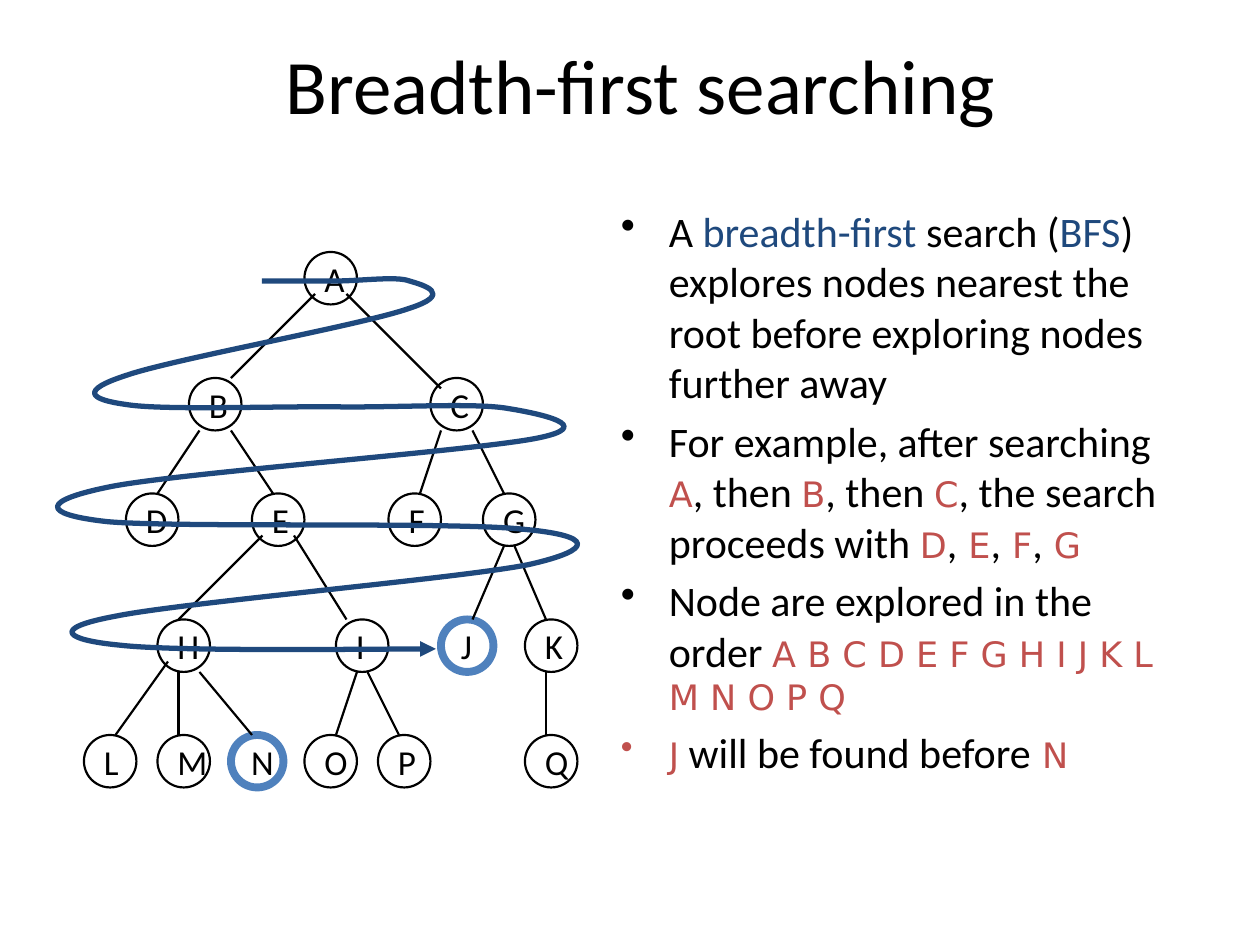
from dataclasses import dataclass

from lxml import etree
from pptx import Presentation
from pptx.dml.color import RGBColor
from pptx.enum.shapes import MSO_CONNECTOR, MSO_SHAPE
from pptx.enum.text import MSO_ANCHOR, PP_ALIGN
from pptx.oxml.ns import qn
from pptx.util import Inches, Pt

OVAL = MSO_SHAPE.OVAL
STRAIGHT = MSO_CONNECTOR.STRAIGHT
MIDDLE = MSO_ANCHOR.MIDDLE
LEFT = PP_ALIGN.LEFT
CENTER = PP_ALIGN.CENTER

BLACK = "000000"
NAVY = "1F497D"
BLUE = "4F81BD"
RED = "C0504D"
GRID = 12
NODE_SIZE = 5


@dataclass(frozen=True)
class Style:
    size: float
    font: str = "Calibri"
    color: str = BLACK


@dataclass(frozen=True)
class Node:
    letter: str
    column: int
    row: int
    goal: bool = False


@dataclass(frozen=True)
class Edge:
    start: tuple[int, int]
    end: tuple[int, int]


TITLE = Style(44)
BODY = Style(24)
TERM = Style(24, color=NAVY)
CODE = Style(20, "DejaVu Sans", RED)
LABEL = Style(20)

BULLETS = [
    [("A ", BODY), ("breadth-first", TERM), (" search (", BODY), ("BFS", TERM),
     (") explores nodes nearest the root before exploring nodes further away", BODY)],
    [("For example, after searching ", BODY), ("A", CODE), (", then ", BODY),
     ("B", CODE), (", then ", BODY), ("C", CODE),
     (", the search proceeds with ", BODY), ("D", CODE), (",", BODY),
     (" E", CODE), (",", BODY), (" F", CODE), (",", BODY), (" G", CODE)],
    [("Node are explored in the order ", BODY),
     ("A B C D E F G H I J K L M N O P Q", CODE)],
    [("J", CODE), (" will be found before", BODY), (" N", CODE)],
]

NODES = [
    Node("A", 29, 24),
    Node("B", 18, 36), Node("C", 41, 36),
    Node("D", 12, 47), Node("E", 24, 47), Node("F", 37, 47), Node("G", 46, 47),
    Node("H", 15, 59), Node("I", 32, 59), Node("J", 42, 59, True), Node("K", 50, 59),
    Node("L", 8, 70), Node("M", 15, 70), Node("N", 22, 70, True),
    Node("O", 29, 70), Node("P", 36, 70), Node("Q", 50, 70),
]

EDGES = [
    Edge((22, 36), (30, 28)), Edge((33, 28), (42, 37)),
    Edge((19, 41), (15, 47)), Edge((22, 41), (26, 47)),
    Edge((42, 41), (40, 47)), Edge((45, 41), (48, 47)),
    Edge((17, 59), (25, 51)), Edge((33, 59), (28, 51)),
    Edge((45, 59), (48, 52)), Edge((52, 59), (49, 52)),
    Edge((11, 70), (16, 63)), Edge((17, 70), (17, 64)), Edge((24, 70), (19, 64)),
    Edge((32, 70), (34, 64)), Edge((38, 70), (35, 64)), Edge((52, 70), (52, 64)),
]

ROUTE_START = (2.08, 2.23)
ROUTE_CURVES = [
    ((2.18, 2.23), (2.47, 2.23), (2.67, 2.23)),
    ((2.86, 2.23), (3.15, 2.19), (3.25, 2.23)),
    ((3.35, 2.26), (3.62, 2.33), (3.24, 2.45)),
    ((2.87, 2.58), (1.37, 2.85), (1, 2.98)),
    ((0.63, 3.1), (0.71, 3.17), (1, 3.21)),
    ((1.29, 3.26), (2.25, 3.22), (2.75, 3.23)),
    ((3.25, 3.23), (3.77, 3.2), (4.02, 3.24)),
    ((4.27, 3.28), (4.77, 3.38), (4.25, 3.48)),
    ((3.73, 3.58), (1.46, 3.75), (0.89, 3.86)),
    ((0.33, 3.97), (0.31, 4.08), (0.85, 4.14)),
    ((1.39, 4.19), (3.59, 4.14), (4.15, 4.2)),
    ((4.71, 4.25), (4.73, 4.36), (4.2, 4.48)),
    ((3.66, 4.59), (1.46, 4.78), (0.92, 4.89)),
    ((0.38, 4.99), (0.53, 5.08), (0.95, 5.12)),
    ((1.38, 5.17), (2.94, 5.15), (3.46, 5.15)),
]


def rgb(color: str) -> RGBColor:
    return RGBColor.from_string(color)


def grid(units: int) -> int:
    return Inches(units / GRID)


def format_run(run, style: Style) -> None:
    run.font.size = Pt(style.size)
    run.font.name = style.font
    run.font.color.rgb = rgb(style.color)


def set_line(line, color: str, width: float) -> None:
    line.color.rgb = rgb(color)
    line.width = Pt(width)


def add_text_frame(slide, left: float, top: float, width: float, height: float):
    box = slide.shapes.add_textbox(Inches(left), Inches(top), Inches(width), Inches(height))
    box.text_frame.word_wrap = True
    return box.text_frame


def add_title(slide, text: str) -> None:
    frame = add_text_frame(slide, 0.92, 0.08, 8.33, 1.17)
    frame.vertical_anchor = MIDDLE
    frame.text = text
    paragraph = frame.paragraphs[0]
    paragraph.alignment = CENTER
    format_run(paragraph.runs[0], TITLE)


def add_bullets(slide) -> None:
    frame = add_text_frame(slide, 4.83, 1.58, 4.75, 5.5)
    for index, parts in enumerate(BULLETS):
        paragraph = frame.add_paragraph() if index else frame.paragraphs[0]
        paragraph.space_before = Pt(4.8)
        for text, style in parts:
            run = paragraph.add_run()
            run.text = text
            format_run(run, style)
        properties = paragraph._p.get_or_add_pPr()
        properties.set("marL", str(Inches(0.38)))
        properties.set("indent", str(Inches(-0.38)))
        etree.SubElement(properties, qn("a:buChar")).set("char", "•")


def add_node(shapes, node: Node) -> None:
    shape = shapes.add_shape(
        OVAL, grid(node.column), grid(node.row), grid(NODE_SIZE), grid(NODE_SIZE))
    shape.shadow.inherit = False
    shape.fill.background()
    if node.goal:
        set_line(shape.line, BLUE, 4.5)
    else:
        set_line(shape.line, BLACK, 1.25)
    frame = shape.text_frame
    frame.word_wrap = False
    frame.vertical_anchor = MIDDLE
    frame.text = node.letter
    paragraph = frame.paragraphs[0]
    paragraph.alignment = LEFT
    format_run(paragraph.runs[0], LABEL)


def add_edge(shapes, edge: Edge) -> None:
    connector = shapes.add_connector(STRAIGHT, *map(grid, edge.start + edge.end))
    set_line(connector.line, BLACK, 1.25)
    etree.SubElement(connector._element.spPr, qn("a:effectLst"))


def add_route(slide) -> None:
    points = [(Inches(x), Inches(y)) for curve in ROUTE_CURVES for x, y in curve]
    builder = slide.shapes.build_freeform(*map(Inches, ROUTE_START))
    builder.add_line_segments(points, close=False)
    route = builder.convert_to_shape()
    route.shadow.inherit = False
    route.fill.background()
    set_line(route.line, NAVY, 3)
    etree.SubElement(route.line._get_or_add_ln(), qn("a:tailEnd")).set("type", "triangle")
    outline = next(route._element.iter(qn("a:path")))
    segments = outline.findall(qn("a:lnTo"))
    for first in range(0, len(segments), 3):
        curve = etree.SubElement(outline, qn("a:cubicBezTo"))
        for segment in segments[first:first + 3]:
            curve.append(segment[0])
            outline.remove(segment)


def main() -> None:
    presentation = Presentation()
    presentation.slide_width = Inches(10)
    presentation.slide_height = Inches(7.5)
    slide = presentation.slides.add_slide(presentation.slide_layouts[6])
    add_title(slide, "Breadth-first searching")
    add_bullets(slide)
    tree = slide.shapes.add_group_shape()
    for node in NODES:
        add_node(tree.shapes, node)
    for edge in EDGES:
        add_edge(tree.shapes, edge)
    add_route(slide)
    presentation.save("out.pptx")


if __name__ == "__main__":
    main()
